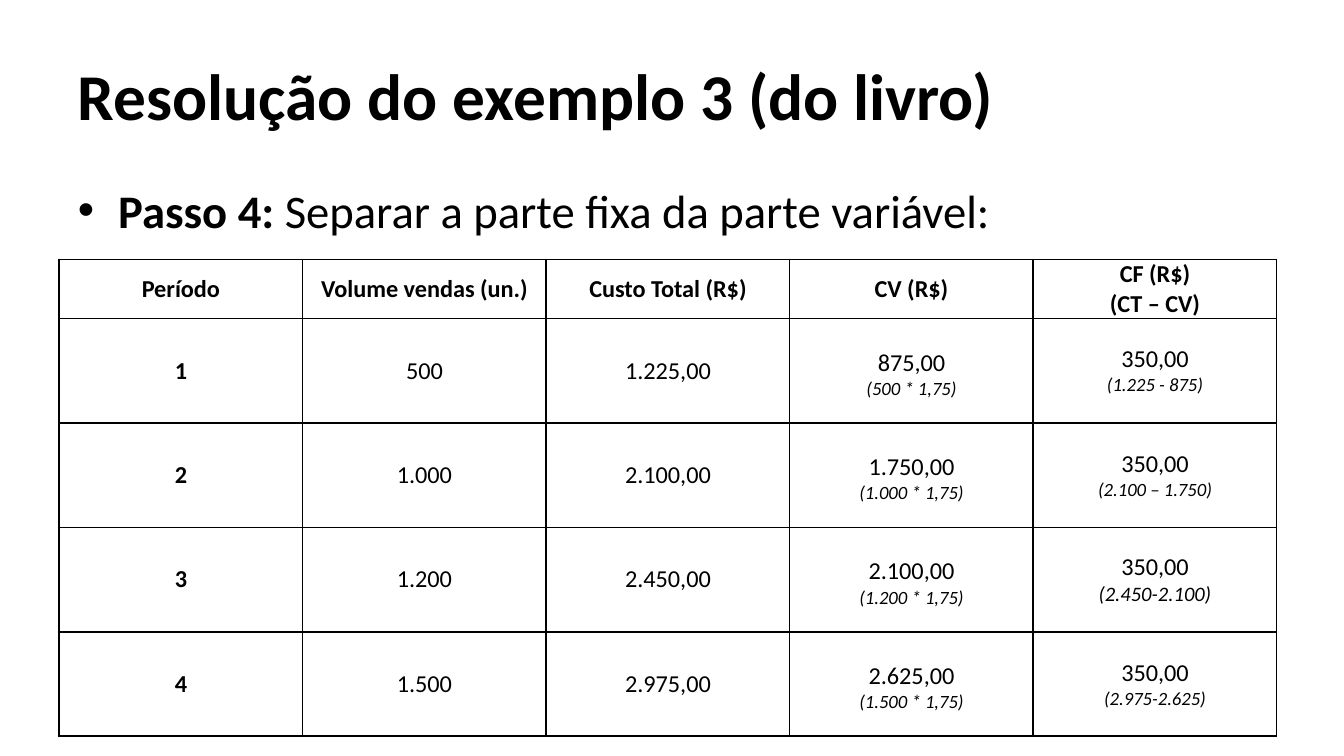
import pptx
import pptx.util
import pptx.dml.color
import pptx.enum.text
import pptx.oxml
import pptx.oxml.ns

Inches = pptx.util.Inches
MID = pptx.enum.text.MSO_ANCHOR.MIDDLE
TOP = pptx.enum.text.MSO_ANCHOR.TOP
CENTER = pptx.enum.text.PP_ALIGN.CENTER
hues = {"ink": "000000", "page": "FFFFFF"}
ink = pptx.dml.color.RGBColor.from_string(hues["ink"])


def put(para, text, size, bold=False, slant=False):
    run = para.add_run()
    run.text = text
    form = {"name": "Calibri", "size": pptx.util.Pt(size), "bold": bold, "italic": slant}
    for key, val in form.items():
        setattr(run.font, key, val)
    run.font.color.rgb = ink


def edge(cell):
    props = cell._tc.get_or_add_tcPr()
    for pos, side in enumerate(("lnL", "lnR", "lnT", "lnB")):
        props.insert(pos, pptx.oxml.parse_xml(
            f'<a:{side} {pptx.oxml.ns.nsdecls("a")} w="12700"><a:solidFill>'
            f'<a:srgbClr val="{hues["ink"]}"/></a:solidFill></a:{side}>'))


deck = pptx.Presentation()
deck.slide_width = Inches(10)
deck.slide_height = Inches(10) * 9 // 16
slide = deck.slides.add_slide(deck.slide_layouts[6])
slide.background.fill.solid()
slide.background.fill.fore_color.rgb = pptx.dml.color.RGBColor.from_string(hues["page"])

paras = []
for top, high, anchor in ((0.23, 0.94, MID), (1.31, 3.71, TOP)):
    frame = slide.shapes.add_textbox(Inches(0.5), Inches(top), Inches(9), Inches(high)).text_frame
    form = {"word_wrap": True, "vertical_anchor": anchor,
            "margin_left": Inches(0.08), "margin_right": Inches(0.08),
            "margin_top": Inches(0.04), "margin_bottom": Inches(0.04)}
    for key, val in form.items():
        setattr(frame, key, val)
    paras.append(frame.paragraphs[0])

title, step = paras
put(title, "Resolução do exemplo 3 (do livro)", 35, True)
put(step, "Passo 4: ", 25, True)
put(step, "Separar a parte fixa da parte variável:", 25)
props = step._p.get_or_add_pPr()
props.set("marL", str(Inches(0.3)))
props.set("indent", str(-Inches(0.3)))
for tag in ('buFont {} typeface="Arial"', 'buChar {} char="•"'):
    props.append(pptx.oxml.parse_xml("<a:" + tag.format(pptx.oxml.ns.nsdecls("a")) + "/>"))

rows = [
    ["Período", "Volume vendas (un.)", "Custo Total (R$)", "CV (R$)", "CF (R$)\n(CT – CV)"],
    ["1", "500", "1.225,00", "875,00\n(500 * 1,75)", "350,00\n(1.225 - 875)"],
    ["2", "1.000", "2.100,00", "1.750,00\n(1.000 * 1,75)", "350,00\n(2.100 – 1.750)"],
    ["3", "1.200", "2.450,00", "2.100,00\n(1.200 * 1,75)", "350,00\n(2.450-2.100)"],
    ["4", "1.500", "2.975,00", "2.625,00\n(1.500 * 1,75)", "350,00\n(2.975-2.625)"],
]
wide, high, head = Inches(9.06), Inches(3.55), Inches(0.44)
grid = slide.shapes.add_table(
    len(rows), len(rows[0]), Inches(0.44), Inches(1.93), wide, high).table
grid.first_row = grid.horz_banding = False
for col in grid.columns:
    col.width = wide // len(rows[0])

for r, row in enumerate(rows):
    grid.rows[r].height = (high - head) // (len(rows) - 1) if r else head
    for c, text in enumerate(row):
        cell = grid.cell(r, c)
        form = {"vertical_anchor": MID,
                "margin_left": Inches(0.06), "margin_right": Inches(0.06),
                "margin_top": Inches(0.05 if r and c == 3 else 0), "margin_bottom": 0}
        for key, val in form.items():
            setattr(cell, key, val)
        cell.fill.background()
        edge(cell)
        for n, line in enumerate(text.split("\n")):
            frame = cell.text_frame
            para = frame.add_paragraph() if n else frame.paragraphs[0]
            para.alignment = CENTER
            note = r > 0 and n > 0
            small = 11 if (r, c) == (3, 4) else 10
            put(para, line, small if note else 13, r == 0 or c == 0, note)

deck.save("out.pptx")
